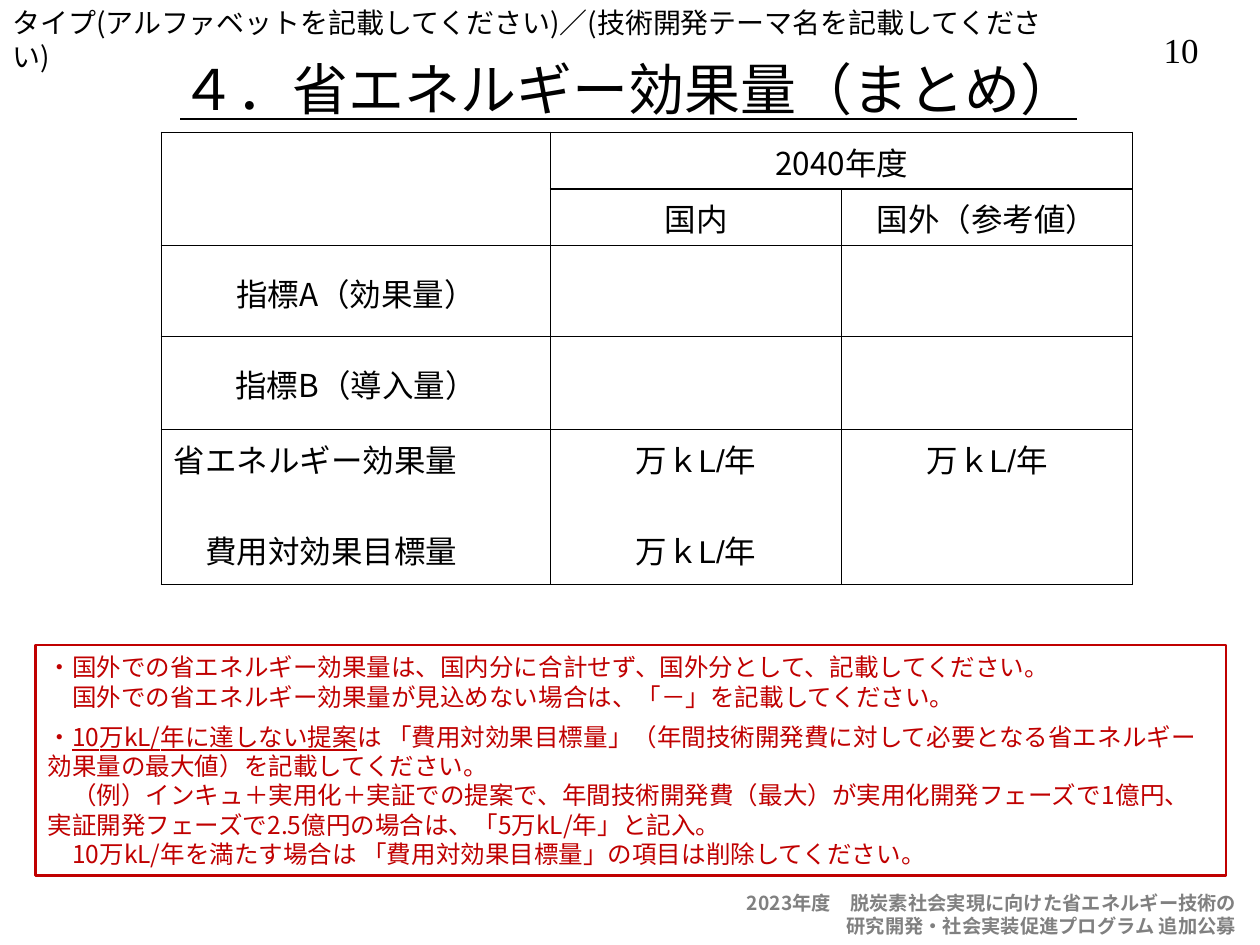
"""Build the energy-saving effect summary slide."""
from lxml.etree import SubElement
from pptx import Presentation
from pptx.dml.color import RGBColor
from pptx.enum.shapes import MSO_SHAPE
from pptx.enum.text import MSO_ANCHOR, PP_ALIGN
from pptx.oxml.ns import qn
from pptx.util import Inches, Pt

THEME = {
    "sans": "Noto Sans CJK JP", "serif": "Times New Roman", "cell": "Arial",
    "black": "000000", "white": "FFFFFF", "red": "C00000", "gray": "808080",
    "number": 20, "header": 16, "footer": 11, "title": 32, "table": 18, "note": 14,
}
PAGE = "10"
HEADER = "タイプ(アルファベットを記載してください)／(技術開発テーマ名を記載してください)"
FOOTER = ["2023年度　脱炭素社会実現に向けた省エネルギー技術の",
          "研究開発・社会実装促進プログラム 追加公募"]
TITLE = "４．省エネルギー効果量（まとめ）"
UNIT = "万ｋL/年"
COLS = [3.09, 2.31, 2.31]
ROWS = [0.45, 0.45, 0.72, 0.74, 1.23]
CELLS = [
    [[], ["2040年度"], []],
    [[], ["国内"], ["国外（参考値）"]],
    [["指標A（効果量）"], [], []],
    [["指標B（導入量）"], [], []],
    [["省エネルギー効果量", "　費用対効果目標量"], [UNIT, UNIT], [UNIT]],
]
MERGES = [((0, 0), (1, 0)), ((0, 1), (0, 2))]
NOTES = [
    (0, [("・国外での省エネルギー効果量は、国内分に合計せず、国外分として、記載してください。", False)]),
    (0, [("　国外での省エネルギー効果量が見込めない場合は、「－」を記載してください。", False)]),
    (6, [("・", False), ("10万kL/年に達しない提案", True),
         ("は 「費用対効果目標量」（年間技術開発費に対して必要となる省エネルギー効果量の最大値）"
          "を記載してください。", False)]),
    (0, [("　（例）インキュ＋実用化＋実証での提案で、年間技術開発費（最大）が実用化開発フェーズで1億円、"
          "実証開発フェーズで2.5億円の場合は、「5万kL/年」と記入。", False)]),
    (0, [("　10万kL/年を満たす場合は 「費用対効果目標量」の項目は削除してください。", False)]),
]


def rgb(name):
    return RGBColor.from_string(THEME[name])


def add_run(p, text, size, color="black", font="sans", **fmt):
    r = p.add_run()
    r.text = text
    values = {"name": THEME[font], "size": Pt(THEME[size]), "bold": False, **fmt}
    for key, value in values.items():
        setattr(r.font, key, value)
    r.font.color.rgb = rgb(color)
    if font != "serif":
        SubElement(r.font._element, qn("a:ea")).set("typeface", THEME["sans"])


def add_paragraph(tf, index, **fmt):
    p = tf.paragraphs[0] if index == 0 else tf.add_paragraph()
    for key, value in fmt.items():
        setattr(p, key, value)
    return p


def add_box(slide, left, top, width, height, wrap=True):
    tf = slide.shapes.add_textbox(*map(Inches, (left, top, width, height))).text_frame
    tf.word_wrap = wrap
    return tf


def add_frame(slide):
    tf = add_box(slide, 9.05, 0.18, 0.65, 0.43, wrap=False)
    add_run(add_paragraph(tf, 0, alignment=PP_ALIGN.CENTER), PAGE, "number", font="serif")
    tf = add_box(slide, 0, -0.01, 8.4, 0.37)
    add_run(add_paragraph(tf, 0, line_spacing=Pt(19.4)), HEADER, "header")
    tf = add_box(slide, 5.83, 7.03, 4.17, 0.47)
    for i, text in enumerate(FOOTER):
        p = add_paragraph(tf, i, line_spacing=Pt(13.1))
        p._p.get_or_add_pPr().set("marL", str(Inches(0.79 * i)))
        add_run(p, text, "footer", "gray", bold=True)


def add_title(slide):
    sp = slide.shapes.title
    sp.left, sp.top, sp.width, sp.height = map(Inches, (0.74, 0.35, 8.5, 0.7))
    tf = sp.text_frame
    tf.vertical_anchor = MSO_ANCHOR.MIDDLE
    add_run(add_paragraph(tf, 0, alignment=PP_ALIGN.CENTER), TITLE, "title", underline=True)


def format_cell(cell):
    tcPr = cell._tc.get_or_add_tcPr()
    for side in ("lnL", "lnR", "lnT", "lnB"):
        ln = SubElement(tcPr, qn(f"a:{side}"), w=str(Pt(1)))
        fill = SubElement(ln, qn("a:solidFill"))
        SubElement(fill, qn("a:srgbClr"), val=THEME["black"])
    cell.fill.solid()
    cell.fill.fore_color.rgb = rgb("white")
    cell.margin_bottom = Inches(0.03)


def add_summary(slide):
    size = map(Inches, (1.28, 1.05, sum(COLS), sum(ROWS)))
    table = slide.shapes.add_table(len(ROWS), len(COLS), *size).table
    table.first_row = table.horz_banding = False
    for col, width in zip(table.columns, COLS):
        col.width = Inches(width)
    for row, height in zip(table.rows, ROWS):
        row.height = Inches(height)
    last = len(ROWS) - 1
    for i, row in enumerate(CELLS):
        for j, lines in enumerate(row):
            cell = table.cell(i, j)
            format_cell(cell)
            if i in (2, 3):
                cell.vertical_anchor = MSO_ANCHOR.MIDDLE
            align = PP_ALIGN.LEFT if (i, j) == (last, 0) else PP_ALIGN.CENTER
            for k, text in enumerate(lines):
                p = add_paragraph(cell.text_frame, k, alignment=align,
                                  line_spacing=Pt(26), space_before=Pt(26 * k))
                add_run(p, text, "table", font="cell" if i == last else "sans")
    for start, end in MERGES:
        table.cell(*start).merge(table.cell(*end))


def add_notes_box(slide):
    sp = slide.shapes.add_shape(MSO_SHAPE.RECTANGLE, *map(Inches, (0.28, 5.12, 9.45, 1.83)))
    sp.shadow.inherit = False
    sp.fill.solid()
    sp.fill.fore_color.rgb = rgb("white")
    sp.line.color.rgb = rgb("red")
    sp.line.width = Pt(1.5)
    tf = sp.text_frame
    tf.word_wrap = True
    tf.vertical_anchor = MSO_ANCHOR.MIDDLE
    for i, (before, runs) in enumerate(NOTES):
        p = add_paragraph(tf, i, alignment=PP_ALIGN.LEFT, line_spacing=Pt(16.75),
                          space_before=Pt(before))
        for text, underline in runs:
            add_run(p, text, "note", "red", underline=underline)


def main():
    prs = Presentation()
    prs.slide_width, prs.slide_height = Inches(10), Inches(7.5)
    slide = prs.slides.add_slide(prs.slide_layouts[5])
    for add_part in (add_frame, add_title, add_summary, add_notes_box):
        add_part(slide)
    prs.save("out.pptx")


if __name__ == "__main__":
    main()
